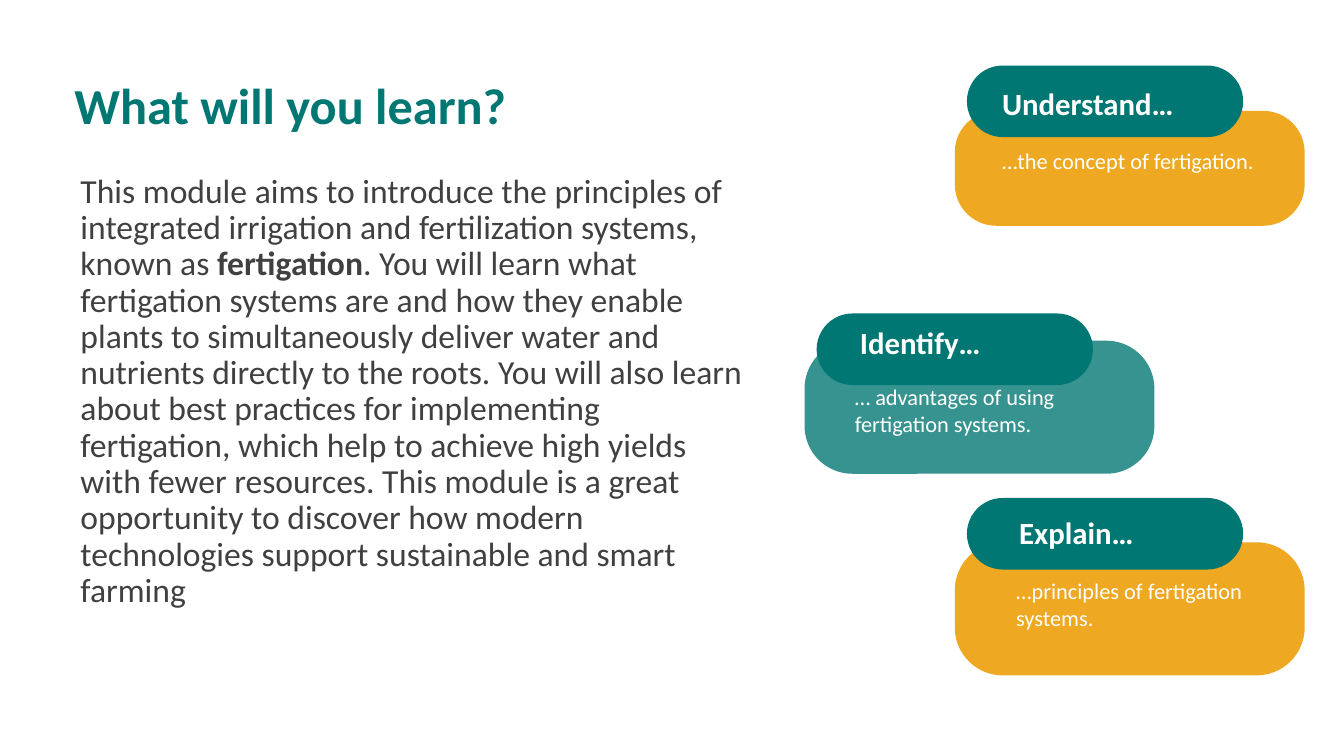
import pptx
import pptx.dml.color
import pptx.enum.shapes
import pptx.enum.text
import pptx.util
from lxml import etree

PX = 9144
FONT = "Calibri"
TEAL = pptx.dml.color.RGBColor(0x00, 0x77, 0x72)
AMBER = pptx.dml.color.RGBColor(0xEE, 0xA8, 0x21)
WHITE = pptx.dml.color.RGBColor(0xFF, 0xFF, 0xFF)
CHARCOAL = pptx.dml.color.RGBColor(0x40, 0x40, 0x40)

PANEL_WIDTH = 347
PILL_WIDTH, PILL_HEIGHT = 274, 71
PILL_INDENT = 12
PANEL_ROUNDING = 0.36
PILL_ROUNDING = 0.5

CARDS = [
    {"panel": (947, 110, 114), "fill": AMBER, "opacity": 100, "pill_top": 65,
     "heading": "Understand…", "heading_at": (984, 79, 274, 47),
     "detail": "…the concept of fertigation.", "detail_at": (984, 141, 285, 37)},
    {"panel": (798, 338, 132), "fill": TEAL, "opacity": 79, "pill_top": 311,
     "heading": "Identify…", "heading_at": (843, 316, 222, 47),
     "detail": "… advantages of using fertigation systems.",
     "detail_at": (838, 375, 285, 64)},
    {"panel": (947, 538, 132), "fill": AMBER, "opacity": 100, "pill_top": 494,
     "heading": "Explain…", "heading_at": (1001, 505, 212, 47),
     "detail": "…principles of fertigation systems.",
     "detail_at": (998, 568, 285, 64)},
]

INTRO = [
    ("This module aims to introduce the principles of integrated irrigation and "
     "fertilization systems, known as ", False),
    ("fertigation", True),
    (". You will learn what fertigation systems are and how they enable plants to "
     "simultaneously deliver water and nutrients directly to the roots. You will "
     "also learn about best practices for implementing fertigation, which help to "
     "achieve high yields with fewer resources. This module is a great opportunity "
     "to discover how modern technologies support sustainable and smart farming",
     False),
]


def emu(box):
    return [pptx.util.Emu(length * PX) for length in box]


def add_rounded(slide, box, fill, rounding, opacity=100):
    rounded = slide.shapes.add_shape(
        pptx.enum.shapes.MSO_SHAPE.ROUNDED_RECTANGLE, *emu(box))
    rounded.adjustments[0] = rounding
    rounded.shadow.inherit = False
    rounded.line.fill.background()
    rounded.fill.solid()
    rounded.fill.fore_color.rgb = fill
    if opacity < 100:
        namespace = pptx.oxml.ns.qn("a:srgbClr")
        colour = rounded.fill._xPr.find(".//" + namespace)
        alpha = etree.SubElement(colour, pptx.oxml.ns.qn("a:alpha"))
        alpha.set("val", str(opacity * 1000))


def add_text(slide, box, runs, size, colour, line_spacing=1.0):
    frame = slide.shapes.add_textbox(*emu(box)).text_frame
    frame.word_wrap = True
    frame.vertical_anchor = pptx.enum.text.MSO_ANCHOR.TOP
    paragraph = frame.paragraphs[0]
    paragraph.line_spacing = line_spacing
    for words, bold in runs:
        run = paragraph.add_run()
        run.text = words
        run.font.name = FONT
        run.font.size = pptx.util.Pt(size)
        run.font.bold = bold
        run.font.color.rgb = colour


def add_card(slide, card):
    left, top, height = card["panel"]
    add_rounded(slide, (left, top, PANEL_WIDTH, height), card["fill"],
                PANEL_ROUNDING, card["opacity"])
    add_rounded(slide, (left + PILL_INDENT, card["pill_top"], PILL_WIDTH, PILL_HEIGHT),
                TEAL, PILL_ROUNDING)
    add_text(slide, card["heading_at"], [(card["heading"], True)], 22, WHITE)
    add_text(slide, card["detail_at"], [(card["detail"], False)], 16, WHITE)


def main():
    deck = pptx.Presentation()
    deck.slide_width, deck.slide_height = emu((1333, 750))
    slide = deck.slides.add_slide(deck.slide_layouts[6])
    for card in CARDS:
        add_card(slide, card)
    add_text(slide, (70, 168, 680, 541), INTRO, 24, CHARCOAL, 0.9)
    add_text(slide, (64, 75, 800, 71), [("What will you learn?", True)], 36, TEAL, 0.9)
    deck.save("out.pptx")


if __name__ == "__main__":
    main()
